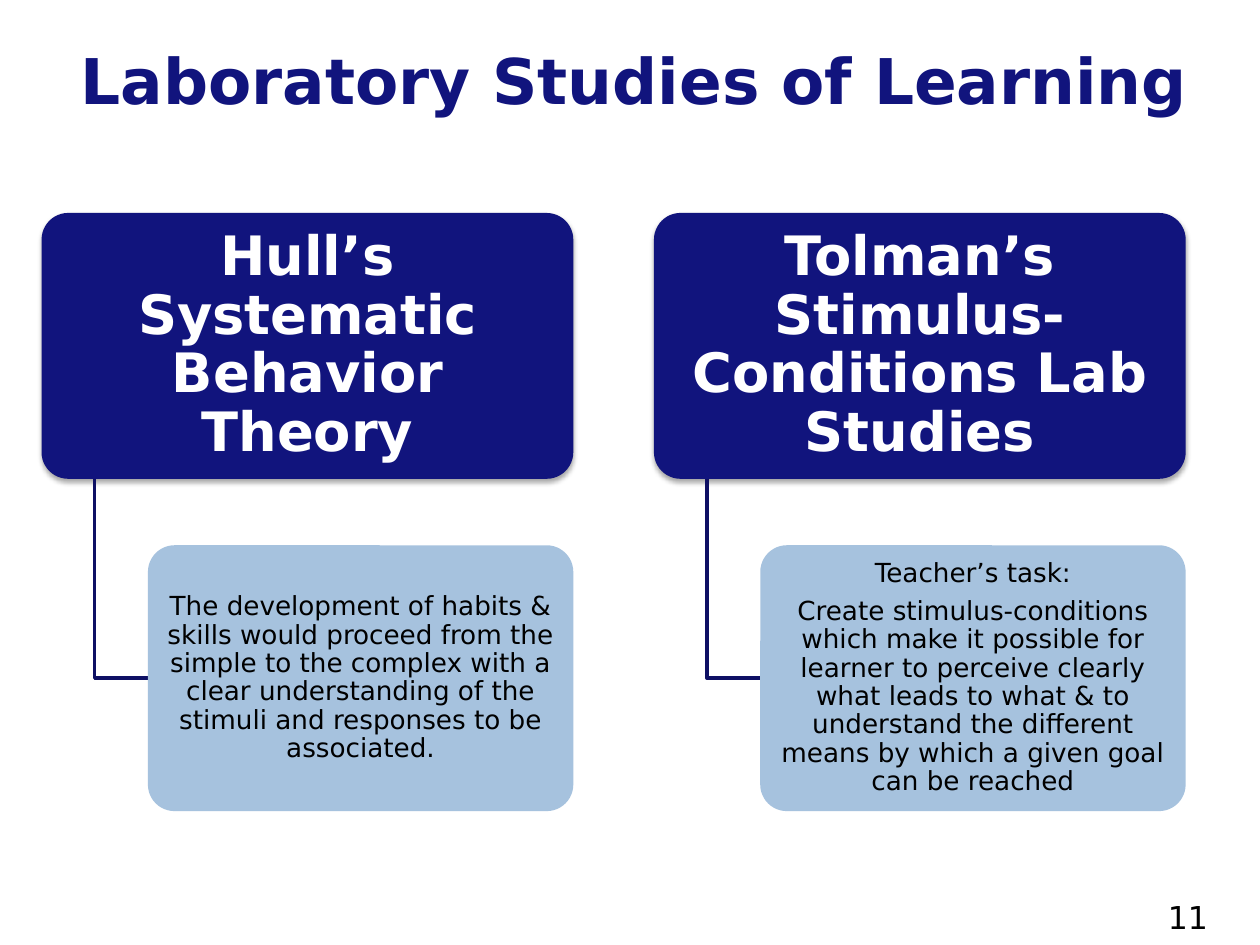
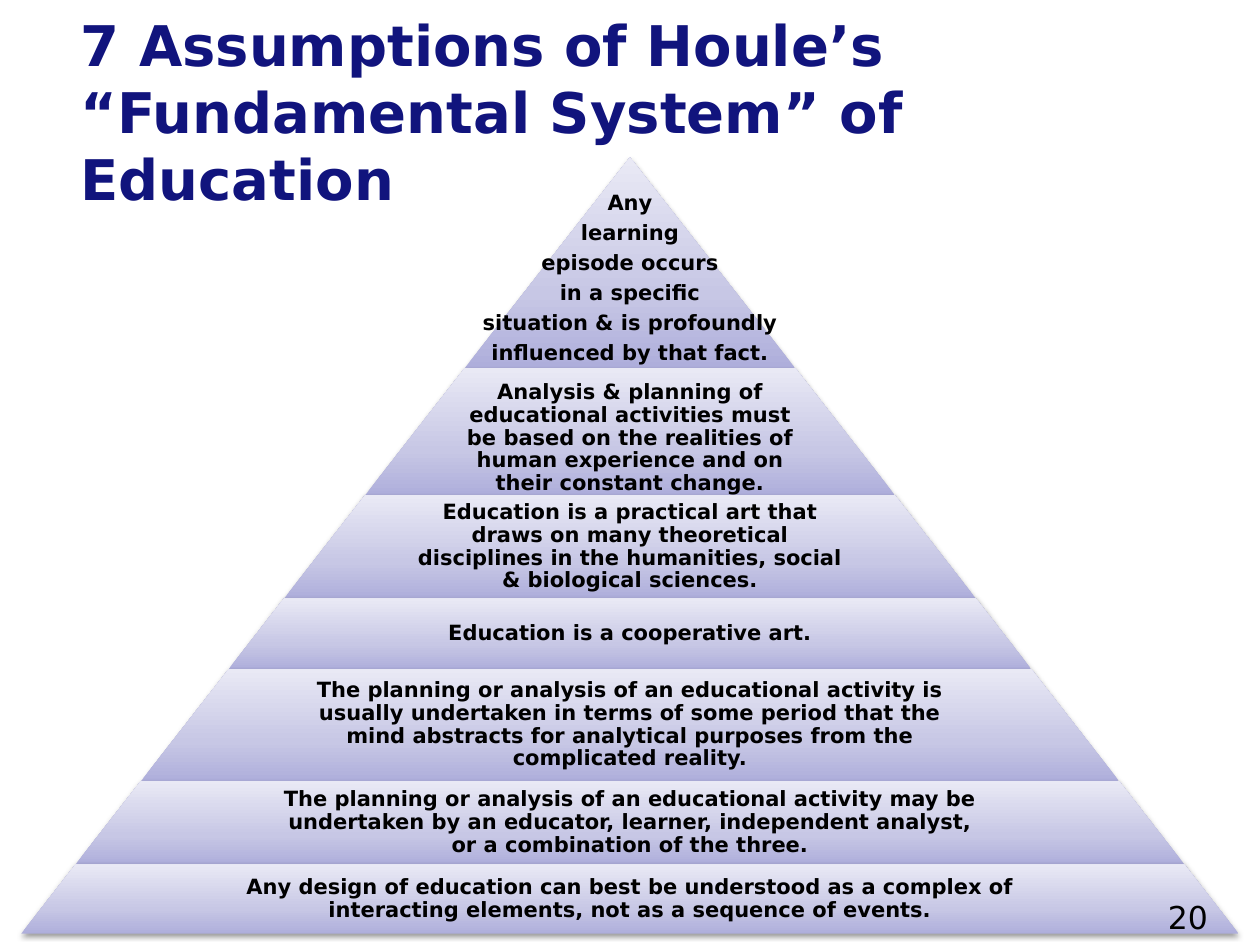
from lxml import etree
from pptx import Presentation
from pptx.dml.color import RGBColor
from pptx.enum.shapes import MSO_SHAPE
from pptx.enum.text import MSO_ANCHOR, MSO_AUTO_SIZE, PP_ALIGN
from pptx.oxml.ns import qn
from pptx.util import Inches, Pt

ROUNDED, TRAPEZOID = MSO_SHAPE.ROUNDED_RECTANGLE, MSO_SHAPE.TRAPEZOID
TOP, MIDDLE, BOTTOM = MSO_ANCHOR.TOP, MSO_ANCHOR.MIDDLE, MSO_ANCHOR.BOTTOM
LEFT, CENTER = PP_ALIGN.LEFT, PP_ALIGN.CENTER

FONT = "DejaVu Sans"
COLORS = {
    "navy": "11147D",
    "branch": "0E1064",
    "pale blue": "9DBCDB",
    "white": "FFFFFF",
    "black": "000000",
}
LAYER_STOPS = [(0, "AEAEDB"), (35, "C7C7E5"), (100, "E9E9F5")]
TITLE_ONLY = 5

THEORIES = [
    ("Hull’s Systematic Behavior Theory", [
        "The development of habits & skills would proceed from the simple to "
        "the complex with a clear understanding of the stimuli and responses "
        "to be associated."]),
    ("Tolman’s Stimulus-Conditions Lab Studies", [
        "Teacher’s task:",
        "Create stimulus-conditions which make it possible for learner to "
        "perceive clearly what leads to what & to understand the different "
        "means by which a given goal can be reached"]),
]

# Layer height in inches, paragraphs; from the apex down
ASSUMPTIONS = [
    (1.67, ["Any", "learning", "episode occurs", "in a specific",
            "situation & is profoundly", "influenced by that fact."]),
    (1.01, ["Analysis & planning of educational activities must be based on "
            "the realities of human experience and on their constant change."]),
    (0.82, ["Education is a practical art that draws on many theoretical "
            "disciplines in the humanities, social & biological sciences."]),
    (0.56, ["Education is a cooperative art."]),
    (0.89, ["The planning or analysis of an educational activity is usually "
            "undertaken in terms of some period that the mind abstracts for "
            "analytical purposes from the complicated reality."]),
    (0.66, ["The planning or analysis of an educational activity may be "
            "undertaken by an educator, learner, independent analyst, or a "
            "combination of the three."]),
    (0.55, ["Any design of education can best be understood as a complex of "
            "interacting elements, not as a sequence of events."]),
]


def rgb(name):
    return RGBColor.from_string(COLORS[name])


def inches(*lengths):
    return [Inches(length) for length in lengths]


def write_text(shape, paragraphs, size, color="black", bold=False,
               align=CENTER, anchor=MIDDLE, inset=(0.02, 0.02), spacing=0.9):
    """Fill a shape with evenly formatted paragraphs; inset is (sides, ends)."""
    frame = shape.text_frame
    sides, ends = inches(*inset)
    frame_format = {
        "word_wrap": True, "auto_size": MSO_AUTO_SIZE.NONE,
        "vertical_anchor": anchor, "margin_left": sides,
        "margin_right": sides, "margin_top": ends, "margin_bottom": ends,
    }
    for key, value in frame_format.items():
        setattr(frame, key, value)
    font_format = {"name": FONT, "size": Pt(size), "bold": bold}
    for index, text in enumerate(paragraphs):
        paragraph = frame.paragraphs[0] if index == 0 else frame.add_paragraph()
        paragraph.alignment = align
        paragraph.line_spacing = spacing
        paragraph.space_before = Pt(0)
        paragraph.space_after = Pt(0.35 * size)
        run = paragraph.add_run()
        run.text = text
        for key, value in font_format.items():
            setattr(run.font, key, value)
        run.font.color.rgb = rgb(color)


def add_plain_shape(slide, kind, box, adjustment):
    shape = slide.shapes.add_shape(kind, *inches(*box))
    shape.adjustments[0] = adjustment
    shape.line.fill.background()
    shape.shadow.inherit = False
    return shape


def add_drop_shadow(shape, opacity, blur, distance):
    effects = shape.element.spPr.find(qn("a:effectLst"))
    shadow = etree.SubElement(
        effects, qn("a:outerShdw"), blurRad=str(Pt(blur)),
        dist=str(Pt(distance)), dir="5400000", rotWithShape="0")
    tint = etree.SubElement(shadow, qn("a:srgbClr"), val=COLORS["black"])
    etree.SubElement(tint, qn("a:alpha"), val=str(opacity * 1000))


def fill_upward_gradient(shape, stops):
    shape.fill.gradient()
    shape.fill.gradient_angle = 90
    stop_list = shape.element.spPr.find(".//" + qn("a:gsLst"))
    for default_stop in list(stop_list):
        stop_list.remove(default_stop)
    for position, color in stops:
        stop = etree.SubElement(stop_list, qn("a:gs"), pos=str(position * 1000))
        etree.SubElement(stop, qn("a:srgbClr"), val=color)


def add_titled_slide(deck, title, size, top, number):
    """Shared frame: title and page number."""
    slide = deck.slides.add_slide(deck.slide_layouts[TITLE_ONLY])
    heading = slide.shapes.title
    heading.left, heading.top, heading.width, heading.height = inches(
        0.33, top, 9.5, 0.92)
    write_text(heading, [title], size, "navy", bold=True, align=LEFT,
               inset=(0.1, 0.05), spacing=1.0)
    indent = heading.text_frame.paragraphs[0]._p.get_or_add_pPr()
    indent.set("marL", str(Inches(0.21)))
    indent.set("indent", "0")
    return slide, number


def add_page_number(slide, number):
    page = slide.shapes.add_textbox(*inches(9.17, 7.08, 0.83, 0.27))
    write_text(page, [str(number)], 18, align=LEFT, anchor=TOP,
               inset=(0.1, 0.05), spacing=1.0)


def add_theory(slide, left, top, width, theory, details):
    """Header card, elbow branch and detail card hanging from it."""
    height = width / 2
    detail_left = left + 0.2 * width
    detail_top = top + height + width / 8

    header = add_plain_shape(slide, ROUNDED, (left, top, width, height), 0.1)
    header.fill.solid()
    header.fill.fore_color.rgb = rgb("navy")
    add_drop_shadow(header, 35, 3.1, 1.8)
    write_text(header, [theory], 31, "white", bold=True, inset=(0.06, 0.04))

    # Branch from header to detail
    stem = left + 0.1 * width
    elbow = detail_top + height / 2
    builder = slide.shapes.build_freeform(*inches(stem, top + height))
    builder.add_line_segments(
        [inches(stem, elbow), inches(detail_left, elbow)], close=False)
    branch = builder.convert_to_shape()
    branch.fill.background()
    branch.line.color.rgb = rgb("branch")
    branch.line.width = Pt(2)
    branch.shadow.inherit = False

    detail = add_plain_shape(
        slide, ROUNDED, (detail_left, detail_top, 0.8 * width, height), 0.1)
    detail.fill.solid()
    detail.fill.fore_color.rgb = rgb("pale blue")
    tint = detail.element.spPr.find(qn("a:solidFill"))[0]
    etree.SubElement(tint, qn("a:alpha"), val="90000")
    write_text(detail, details, 15, inset=(0.03, 0.02))


def add_pyramid(slide, left, top, width, layers):
    """Stack of trapezoids that widen at one slope from the apex."""
    center = left + width / 2
    slope = width / 2 / sum(height for height, _ in layers)
    depth = 0
    for index, (height, paragraphs) in enumerate(layers):
        layer_top = top + depth
        depth += height
        base = 2 * slope * depth
        layer = add_plain_shape(
            slide, TRAPEZOID, (center - base / 2, layer_top, base, height), slope)
        fill_upward_gradient(layer, LAYER_STOPS)
        add_drop_shadow(layer, 38, 3.1, 1.6)

        # Label: full base at the apex, 65 % of it below
        label_width = base if index == 0 else 0.65 * base
        label = slide.shapes.add_textbox(
            *inches(center - label_width / 2, layer_top, label_width, height))
        write_text(label, paragraphs, 12, bold=True,
                   anchor=BOTTOM if index < 2 else MIDDLE,
                   inset=(0, 0) if index == 1 else (0.02, 0.02))


def build_theories_slide(deck):
    slide, number = add_titled_slide(
        deck, "Laboratory Studies of Learning", 36, 0.17, 11)
    card_width, gap = 4.22, 0.64
    for column, (theory, details) in enumerate(THEORIES):
        add_theory(slide, 0.33 + column * (card_width + gap), 1.69, card_width,
                   theory, details)
    add_page_number(slide, number)


def build_assumptions_slide(deck):
    slide, number = add_titled_slide(
        deck, "7 Assumptions of Houle’s “Fundamental System” of Education",
        32, 0.42, 20)
    add_pyramid(slide, 0.17, 1.25, 9.66, ASSUMPTIONS)
    add_page_number(slide, number)


def main():
    deck = Presentation()
    deck.slide_width, deck.slide_height = inches(10, 7.5)
    build_theories_slide(deck)
    build_assumptions_slide(deck)
    deck.save("out.pptx")


if __name__ == "__main__":
    main()
